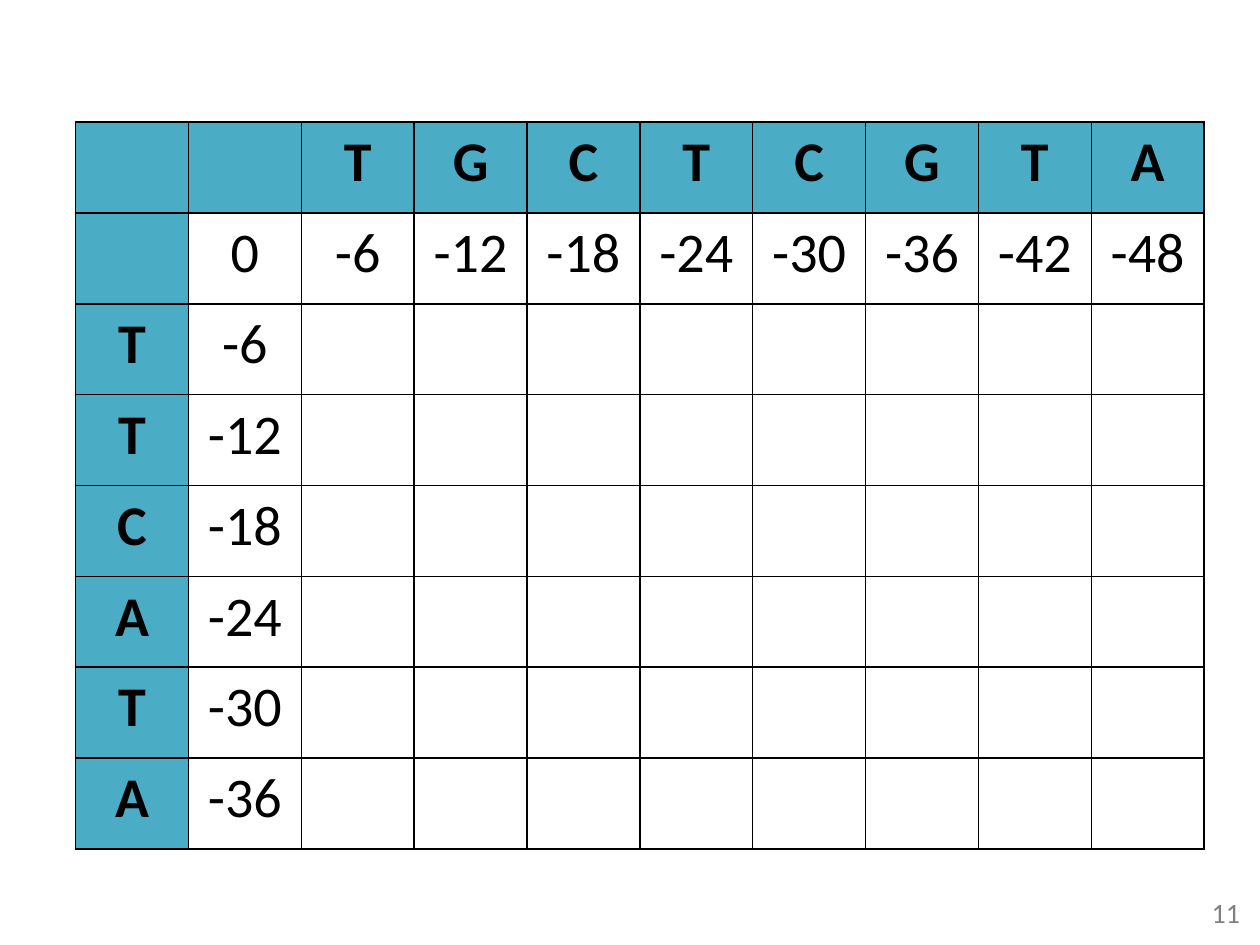
import pptx
import pptx.util
import pptx.dml.color
import pptx.enum.text
import pptx.oxml
import pptx.oxml.ns
from pptx.util import Inches

TOP = "TGCTCGTA"
SIDE = "TTCATA"
GAP = -6
PAGE = "11"
TEAL, BLACK, GRAY = "4BACC6", "000000", "808080"
LEFT, UPPER, WIDTH, HEIGHT = 0.6, 0.97, 8.96, 5.77
ALIGN = pptx.enum.text.PP_ALIGN
ANCHOR = pptx.enum.text.MSO_ANCHOR


def color(code):
    return pptx.dml.color.RGBColor.from_string(code)


def write(frame, text, size=32, bold=False, ink=BLACK, align=ALIGN.CENTER):
    para = frame.paragraphs[0]
    para.alignment = align
    run = para.add_run()
    run.text = text
    font = run.font
    font.name = "Calibri"
    font.size = pptx.util.Pt(size)
    font.bold = bold
    font.color.rgb = color(ink)


def border(cell):
    props = cell._tc.get_or_add_tcPr()
    for at, side in enumerate(("lnL", "lnR", "lnT", "lnB")):
        line = pptx.oxml.parse_xml(
            f'<a:{side} {pptx.oxml.ns.nsdecls("a")} w="12700">'
            f'<a:solidFill><a:srgbClr val="{BLACK}"/></a:solidFill></a:{side}>'
        )
        props.insert(at, line)


def label(row, col):
    if row == 0:
        return TOP[col - 2] if col > 1 else ""
    if col == 0:
        return SIDE[row - 2] if row > 1 else ""
    if row == 1 or col == 1:
        return str(GAP * (row + col - 2))
    return ""


def grid(slide):
    rows, cols = len(SIDE) + 2, len(TOP) + 2
    table = slide.shapes.add_table(
        rows, cols, Inches(LEFT), Inches(UPPER), Inches(WIDTH), Inches(HEIGHT)
    ).table
    table.horz_banding = False
    for col in table.columns:
        col.width = Inches(WIDTH / cols)
    for row in table.rows:
        row.height = Inches(HEIGHT / rows)
    for row in range(rows):
        for col in range(cols):
            cell = table.cell(row, col)
            head = row == 0 or col == 0
            if head:
                cell.fill.solid()
                cell.fill.fore_color.rgb = color(TEAL)
            else:
                cell.fill.background()
            border(cell)
            text = label(row, col)
            if text:
                write(cell.text_frame, text, bold=head)


def number(slide):
    box = slide.shapes.add_textbox(Inches(7.61), Inches(7.04), Inches(2.33), Inches(0.4))
    frame = box.text_frame
    frame.word_wrap = True
    frame.vertical_anchor = ANCHOR.MIDDLE
    write(frame, PAGE, size=16, ink=GRAY, align=ALIGN.RIGHT)


def main():
    deck = pptx.Presentation()
    deck.slide_width, deck.slide_height = Inches(10), Inches(7.5)
    slide = deck.slides.add_slide(deck.slide_layouts[6])
    number(slide)
    grid(slide)
    deck.save("out.pptx")


if __name__ == "__main__":
    main()
